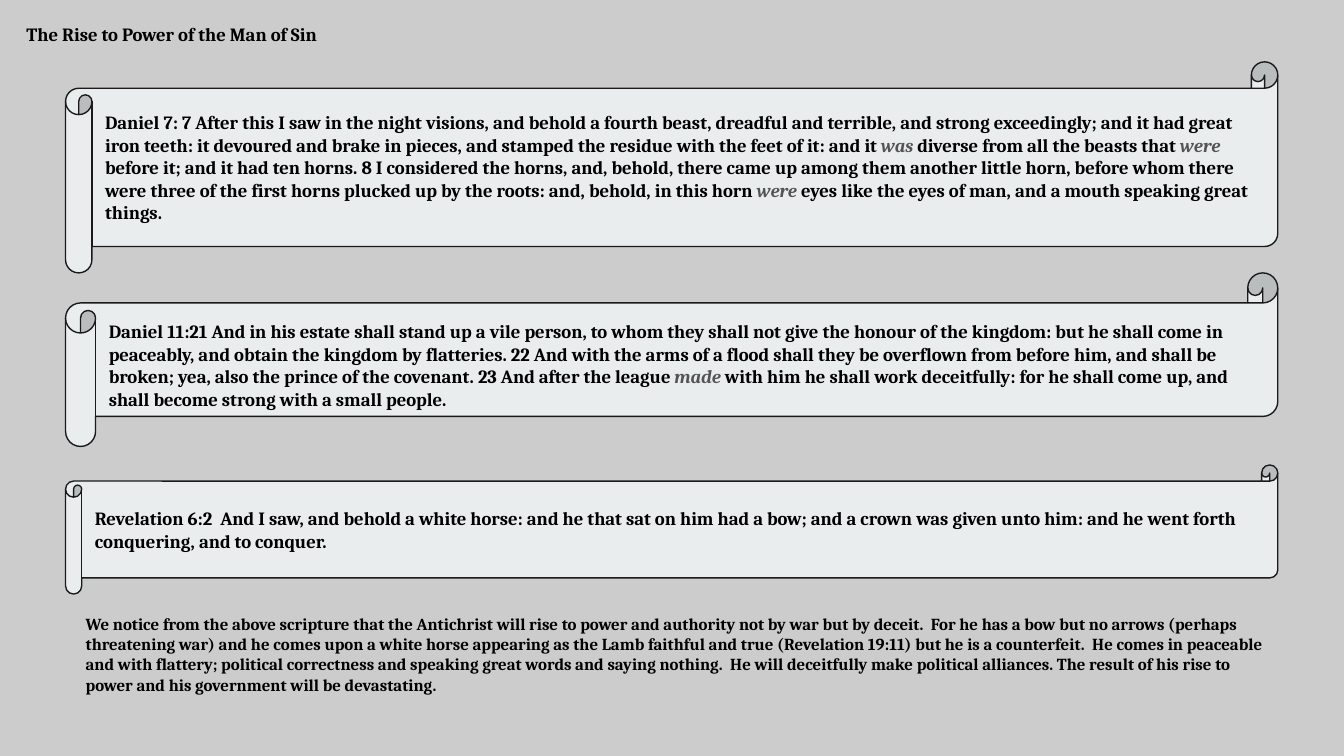
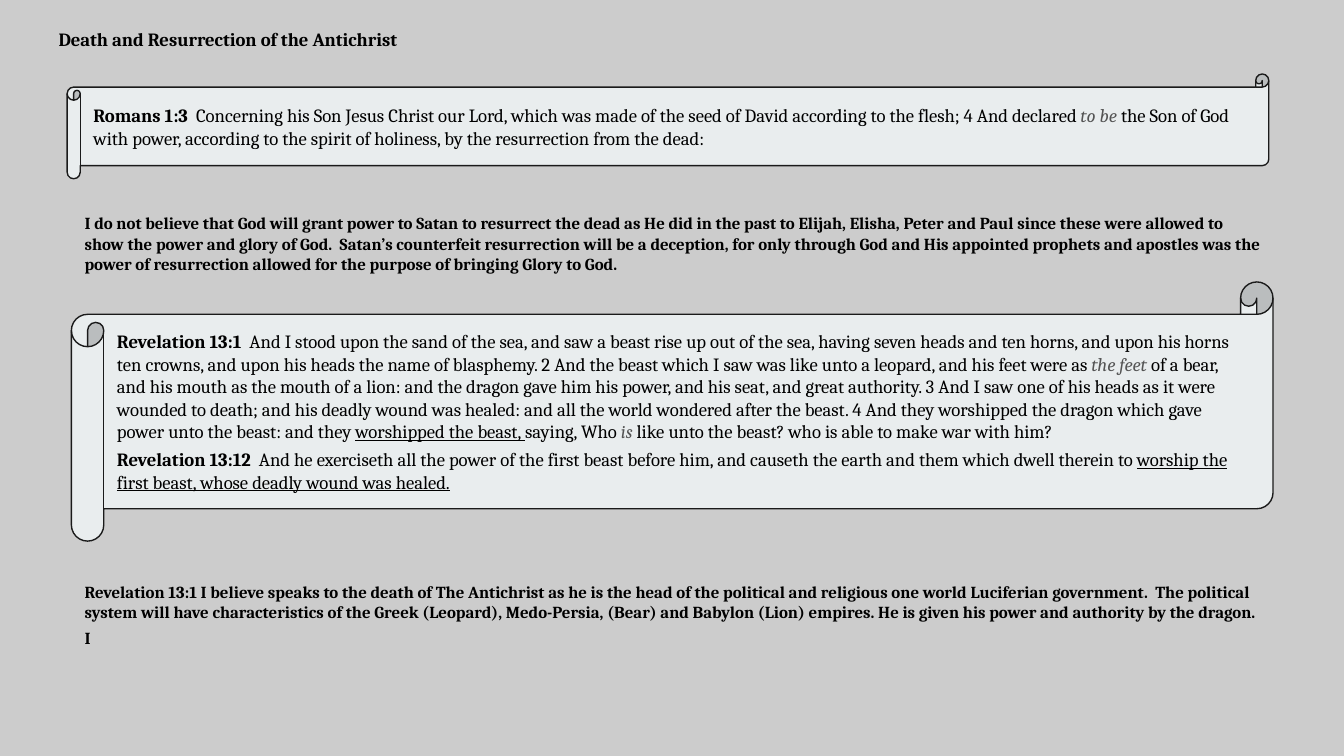
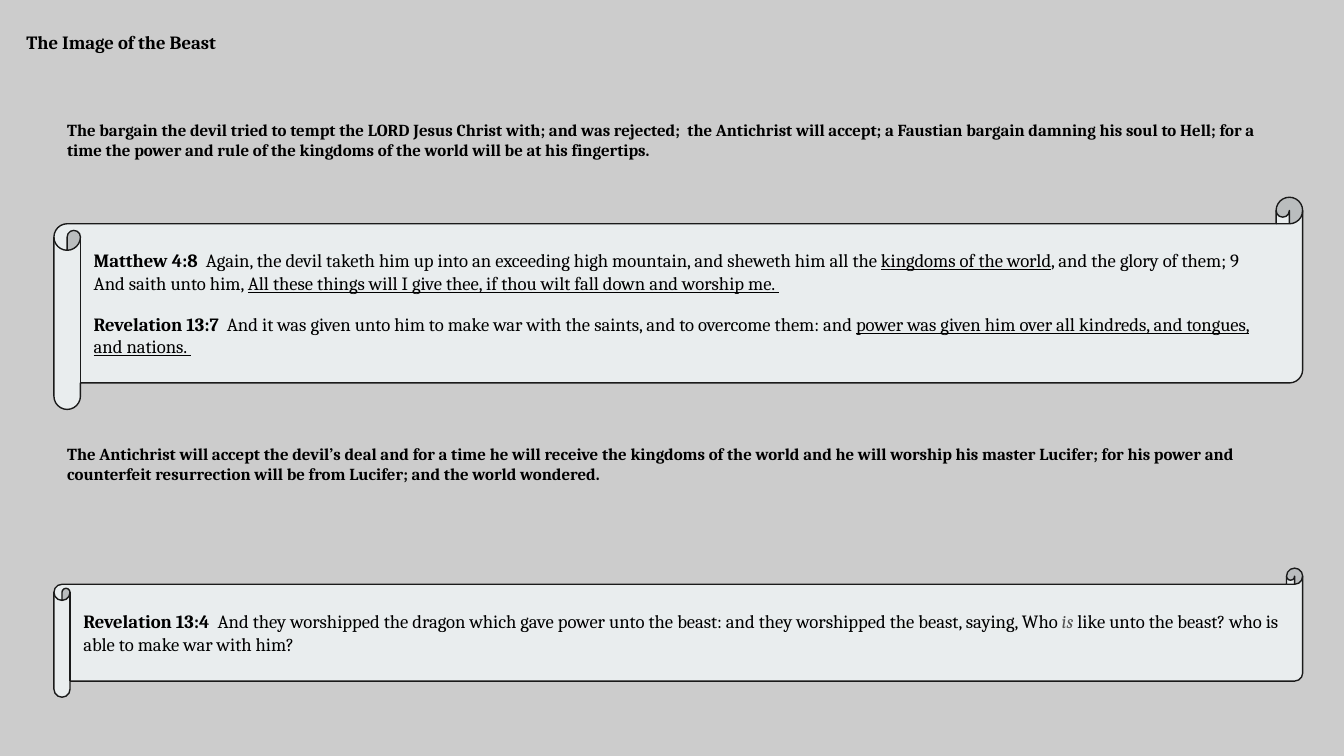
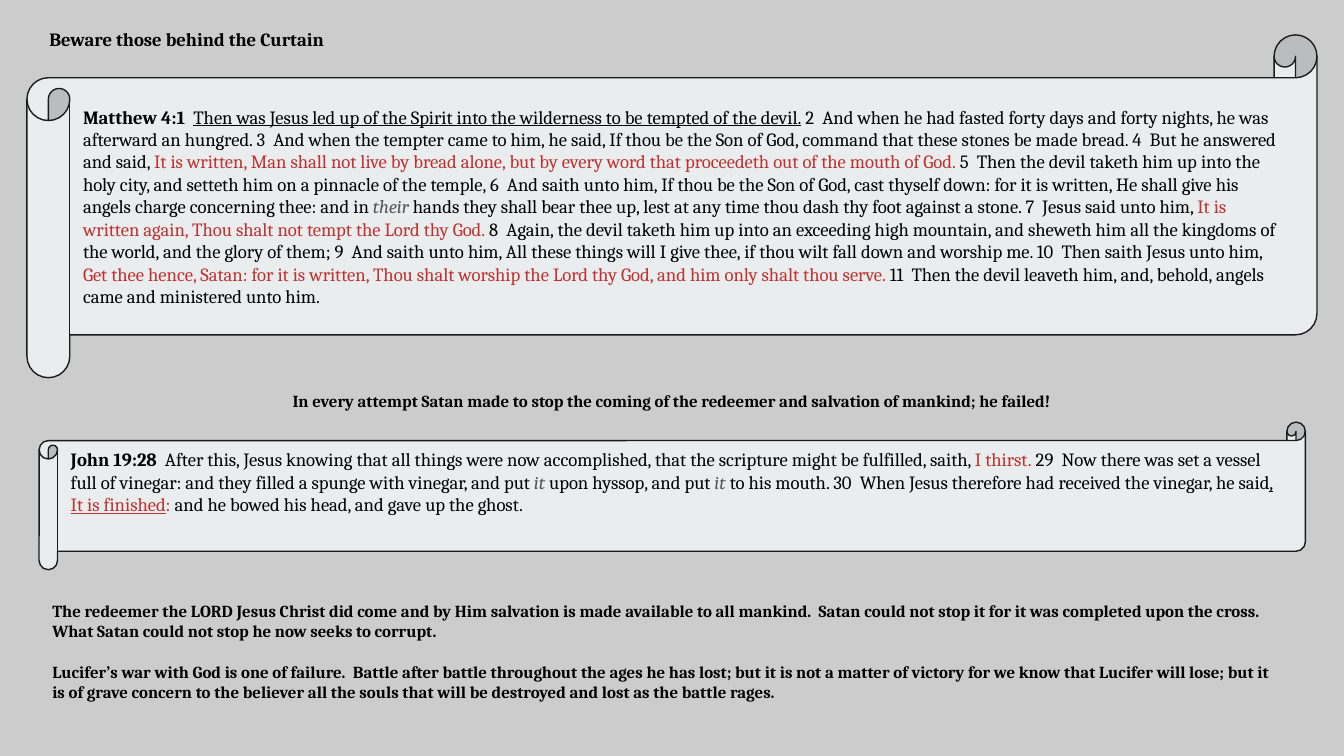
from pptx import Presentation
from pptx.dml.color import RGBColor
from pptx.enum.shapes import MSO_SHAPE as Shape
from pptx.enum.text import MSO_ANCHOR as Anchor, MSO_AUTO_SIZE as Fit, PP_ALIGN as Align
from pptx.util import Cm, Pt

COLORS = {
    "back": "CCCCCC",
    "paper": "E9EDEE",
    "edge": "1A1A1A",
    "ink": "000000",
    "gray": "545454",
    "red": "BF3030",
}
FONT = "Cambria"
INSET = 0.25
TITLE_ONLY = 5

# Formats of the runs inside a verse
REF = {"bold": True}
ADDED = {"italic": True, "color": "gray"}
LINE = {"underline": True}
SPOKEN = {"color": "red"}


def rgb(name):
    return RGBColor.from_string(COLORS[name])


def write(par, text, size=10, color="ink", bold=False, italic=False, underline=False):
    run = par.add_run()
    run.text = text
    font = run.font
    font.name, font.size = FONT, Pt(size)
    font.bold, font.italic, font.underline = bold, italic, underline
    font.color.rgb = rgb(color)


def fill_text(shape, pars, align=Align.LEFT, anchor=Anchor.TOP, gap=0,
              top=INSET, bottom=INSET, **base):
    """Write paragraphs; each is a list of strings or (string, format) pairs."""
    frame = shape.text_frame
    frame.word_wrap = True
    frame.auto_size = Fit.NONE
    frame.vertical_anchor = anchor
    frame.margin_left = frame.margin_right = Cm(INSET)
    frame.margin_top, frame.margin_bottom = Cm(top), Cm(bottom)
    for i, pieces in enumerate(pars):
        par = frame.add_paragraph() if i else frame.paragraphs[0]
        par.alignment = align
        par.space_before = Pt(gap if i else 0)
        for piece in pieces:
            text, form = (piece, {}) if isinstance(piece, str) else piece
            write(par, text, **{**base, **form})


def add_page(deck, title, box, align=Align.LEFT):
    page = deck.slides.add_slide(deck.slide_layouts[TITLE_ONLY])
    page.background.fill.solid()
    page.background.fill.fore_color.rgb = rgb("back")
    head = page.shapes.title
    head.left, head.top, head.width, head.height = map(Cm, box)
    fill_text(head, [[title]], align=align, bold=True)
    return page


def add_note(page, box, *lines, **form):
    note = page.shapes.add_textbox(*map(Cm, box))
    fill_text(note, [[line] for line in lines], size=9, bold=True, **form)


def add_scroll(page, box, *pars, curl=0.125, drop=0, **form):
    """Draw a scroll with verses; drop moves the text off its middle."""
    scroll = page.shapes.add_shape(Shape.HORIZONTAL_SCROLL, *map(Cm, box))
    scroll.adjustments[0] = curl
    scroll.shadow.inherit = False
    scroll.fill.solid()
    scroll.fill.fore_color.rgb = rgb("paper")
    scroll.line.color.rgb = rgb("edge")
    scroll.line.width = Pt(0.75)
    fill_text(scroll, pars, anchor=Anchor.MIDDLE, top=max(drop, 0),
              bottom=max(-drop, 0), **form)


def add_rise(deck):
    page = add_page(deck, "The Rise to Power of the Man of Sin", (0.25, 0.18, 7.5, 1.7))
    left, width = 1.24, 22.91
    add_scroll(page, (left, 1.17, width, 3.99), [
        "Daniel 7: 7 After this I saw in the night visions, and behold a fourth beast, "
        "dreadful and terrible, and strong exceedingly; and it had great iron teeth: it "
        "devoured and brake in pieces, and stamped the residue with the feet of it: and it ",
        ("was", ADDED), " diverse from all the beasts that ", ("were", ADDED),
        " before it; and it had ten horns. 8 I considered the horns, and, behold, there came "
        "up among them another little horn, before whom there were three of the first horns "
        "plucked up by the roots: and, behold, in this horn ", ("were", ADDED),
        " eyes like the eyes of man, and a mouth speaking great things."], bold=True)
    add_scroll(page, (left, 5.16, width, 3.28), [
        "Daniel 11:21 And in his estate shall stand up a vile person, to whom they shall not "
        "give the honour of the kingdom: but he shall come in peaceably, and obtain the "
        "kingdom by flatteries. 22 And with the arms of a flood shall they be overflown from "
        "before him, and shall be broken; yea, also the prince of the covenant. 23 And after "
        "the league ", ("made", ADDED),
        " with him he shall work deceitfully: for he shall come up, and shall become strong "
        "with a small people."], curl=0.173, drop=0.2, bold=True)
    add_scroll(page, (left, 8.79, width, 2.44), [
        "Revelation 6:2  And I saw, and behold a white horse: and he that sat on him had a "
        "bow; and a crown was given unto him: and he went forth conquering, and to conquer."],
        bold=True)
    add_note(
        page, (1.37, 11.35, 22.78, 2.44),
        "We notice from the above scripture that the Antichrist will rise to power and "
        "authority not by war but by deceit.  For he has a bow but no arrows (perhaps "
        "threatening war) and he comes upon a white horse appearing as the Lamb faithful and "
        "true (Revelation 19:11) but he is a counterfeit.  He comes in peaceable and with "
        "flattery; political correctness and speaking great words and saying nothing.  He "
        "will deceitfully make political alliances. The result of his rise to power and his "
        "government will be devastating.")


def add_death(deck):
    page = add_page(deck, "Death and Resurrection of the Antichrist",
                    (0.15, 0.28, 8.31, 0.89), Align.CENTER)
    left, width = 1.35, 22.71
    add_scroll(page, (1.27, 1.4, width, 1.98), [
        ("Romans 1:3 ", REF),
        " Concerning his Son Jesus Christ our Lord, which was made of the seed of David "
        "according to the flesh; 4 And declared ", ("to be", ADDED),
        " the Son of God with power, according to the spirit of holiness, by the "
        "resurrection from the dead:"])
    add_note(
        page, (left, 3.78, width, 1.83),
        "I do not believe that God will grant power to Satan to resurrect the dead as He did "
        "in the past to Elijah, Elisha, Peter and Paul since these were allowed to show the "
        "power and glory of God.  Satan’s counterfeit resurrection will be a deception, for "
        "only through God and His appointed prophets and apostles was the power of "
        "resurrection allowed for the purpose of bringing Glory to God.")
    add_scroll(page, (left, 5.33, width, 4.9), [
        ("Revelation 13:1", REF),
        "  And I stood upon the sand of the sea, and saw a beast rise up out of the sea, "
        "having seven heads and ten horns, and upon his horns ten crowns, and upon his heads "
        "the name of blasphemy. 2 And the beast which I saw was like unto a leopard, and his "
        "feet were as ", ("the feet", ADDED),
        " of a bear, and his mouth as the mouth of a lion: and the dragon gave him his power, "
        "and his seat, and great authority. 3 And I saw one of his heads as it were wounded "
        "to death; and his deadly wound was healed: and all the world wondered after the "
        "beast. 4 And they worshipped the dragon which gave power unto the beast: and they ",
        ("worshipped the beast, ", LINE), "saying, Who ", ("is", ADDED),
        " like unto the beast? who is able to make war with him?"], [
        ("Revelation 13:12", REF),
        "  And he exerciseth all the power of the first beast before him, and causeth the "
        "earth and them which dwell therein to ",
        ("worship the first beast, whose deadly wound was healed.", LINE)], gap=3)
    add_note(
        page, (left, 10.74, width, 2.36),
        "Revelation 13:1 I believe speaks to the death of The Antichrist as he is the head of "
        "the political and religious one world Luciferian government.  The political system "
        "will have characteristics of the Greek (Leopard), Medo-Persia, (Bear) and Babylon "
        "(Lion) empires. He is given his power and authority by the dragon.",
        "I", gap=3)


def add_image(deck):
    page = add_page(deck, "The Image of the Beast", (0.25, 0.33, 5.05, 0.89))
    left, width = 1.02, 23.6
    add_note(
        page, (left, 2.01, width, 1.35),
        "The bargain the devil tried to tempt the LORD Jesus Christ with; and was rejected;  "
        "the Antichrist will accept; a Faustian bargain damning his soul to Hell; for a time "
        "the power and rule of the kingdoms of the world will be at his fingertips.")
    add_scroll(page, (left, 3.73, width, 4.01), [
        ("Matthew 4:8  ", REF),
        "Again, the devil taketh him up into an exceeding high mountain, and sheweth him all "
        "the ", ("kingdoms of the world", LINE),
        ", and the glory of them; 9  And saith unto him, ",
        ("All these things will I give thee, if thou wilt fall down and worship me. ", LINE)], [
        ("Revelation 13:7 ", REF),
        " And it was given unto him to make war with the saints, and to overcome them: and ",
        ("power was given him over all kindreds, and tongues, and nations. ", LINE)], gap=10)
    add_note(
        page, (left, 8.13, width, 1.7),
        "The Antichrist will accept the devil’s deal and for a time he will receive the "
        "kingdoms of the world and he will worship his master Lucifer; for his power and "
        "counterfeit resurrection will be from Lucifer; and the world wondered.")
    add_scroll(page, (left, 10.74, width, 2.44), [
        ("Revelation 13:4 ", REF),
        " And they worshipped the dragon which gave power unto the beast: and they worshipped "
        "the beast, saying, Who ", ("is", ADDED),
        " like unto the beast? who is able to make war with him?"])


def add_curtain(deck):
    page = add_page(deck, "Beware those behind the Curtain",
                    (0.3, 0.28, 6.45, 0.97), Align.CENTER)
    add_scroll(page, (0.51, 0.66, 24.38, 6.48), [
        ("Matthew 4:1  ", REF),
        ("Then was Jesus led up of the Spirit into the wilderness to be tempted of the devil.",
         LINE),
        " 2  And when he had fasted forty days and forty nights, he was afterward an hungred. "
        "3  And when the tempter came to him, he said, If thou be the Son of God, command "
        "that these stones be made bread. 4  But he answered and said, ",
        ("It is written, Man shall not live by bread alone, but by every word that proceedeth "
         "out of the mouth of God.", SPOKEN),
        " 5  Then the devil taketh him up into the holy city, and setteth him on a pinnacle of "
        "the temple, 6  And saith unto him, If thou be the Son of God, cast thyself down: for "
        "it is written, He shall give his angels charge concerning thee: and in ",
        ("their", ADDED),
        " hands they shall bear thee up, lest at any time thou dash thy foot against a stone. "
        "7  Jesus said unto him, ",
        ("It is written again, Thou shalt not tempt the Lord thy God.", SPOKEN),
        " 8  Again, the devil taketh him up into an exceeding high mountain, and sheweth him "
        "all the kingdoms of the world, and the glory of them; 9  And saith unto him, All "
        "these things will I give thee, if thou wilt fall down and worship me. 10  Then saith "
        "Jesus unto him, ",
        ("Get thee hence, Satan: for it is written, Thou shalt worship the Lord thy God, and "
         "him only shalt thou serve.", SPOKEN),
        " 11  Then the devil leaveth him, and, behold, angels came and ministered unto him."])
    add_note(
        page, (0.66, 7.14, 24.05, 0.84),
        "In every attempt Satan made to stop the coming of the redeemer and salvation of "
        "mankind; he failed!", align=Align.CENTER)
    add_scroll(page, (0.74, 7.98, 23.93, 2.79), [
        ("John 19:28", REF),
        "  After this, Jesus knowing that all things were now accomplished, that the scripture "
        "might be fulfilled, saith, ", ("I thirst.", SPOKEN),
        " 29  Now there was set a vessel full of vinegar: and they filled a spunge with "
        "vinegar, and put ", ("it", ADDED), " upon hyssop, and put ", ("it", ADDED),
        " to his mouth. 30  When Jesus therefore had received the vinegar, he said",
        (", ", LINE), ("It is finished", {**SPOKEN, **LINE}), (":", SPOKEN),
        " and he bowed his head, and gave up the ghost."], drop=-0.53)
    add_note(
        page, (0.74, 11.1, 23.62, 2.79),
        "The redeemer the LORD Jesus Christ did come and by Him salvation is made available to "
        "all mankind.  Satan could not stop it for it was completed upon the cross.  What "
        "Satan could not stop he now seeks to corrupt.",
        "Lucifer’s war with God is one of failure.  Battle after battle throughout the ages he "
        "has lost; but it is not a matter of victory for we know that Lucifer will lose; but "
        "it is of grave concern to the believer all the souls that will be destroyed and lost "
        "as the battle rages.", gap=11)


def main():
    deck = Presentation()
    deck.slide_width, deck.slide_height = Cm(25.4), Cm(14.29)
    for add in (add_rise, add_death, add_image, add_curtain):
        add(deck)
    deck.save("out.pptx")


if __name__ == "__main__":
    main()
